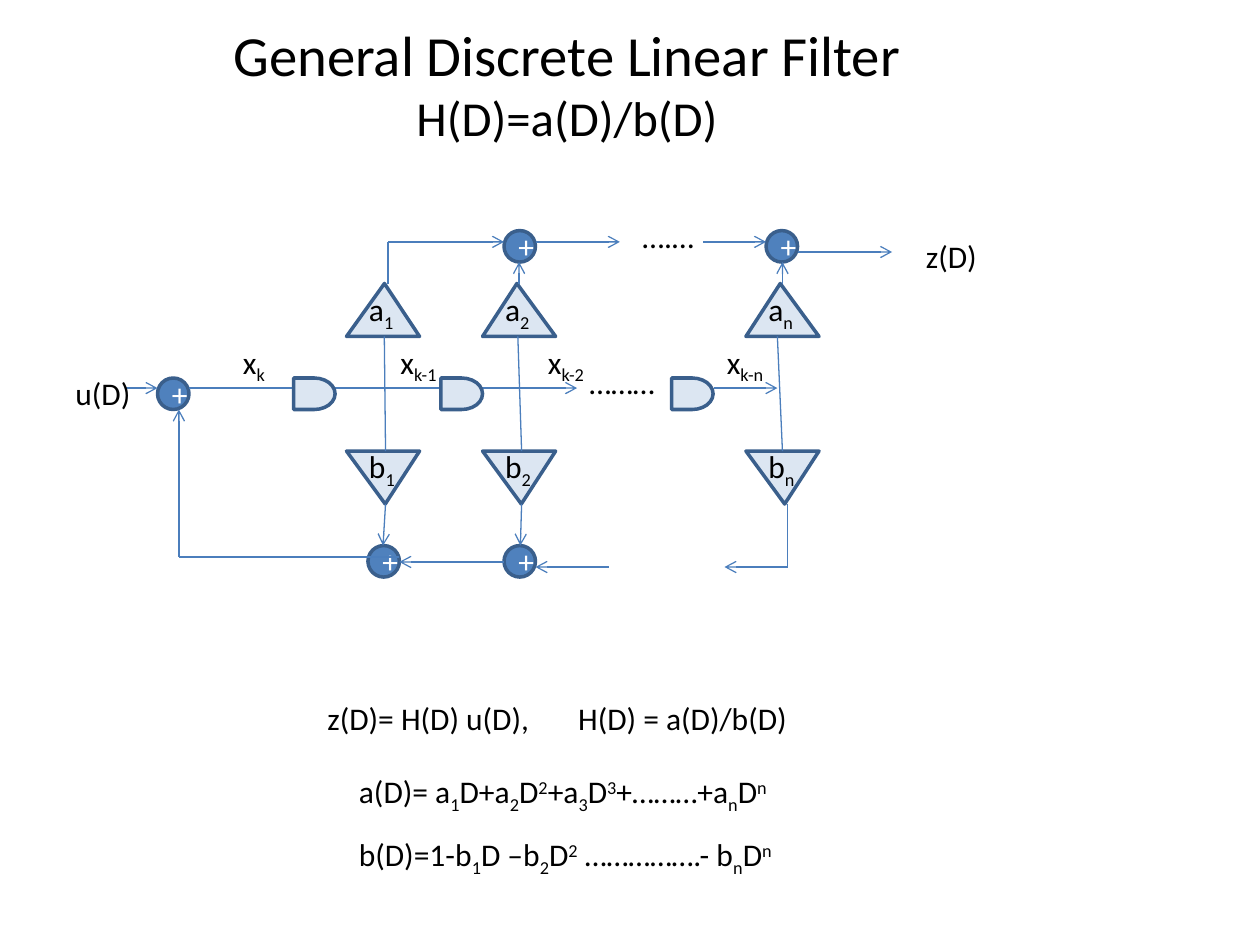
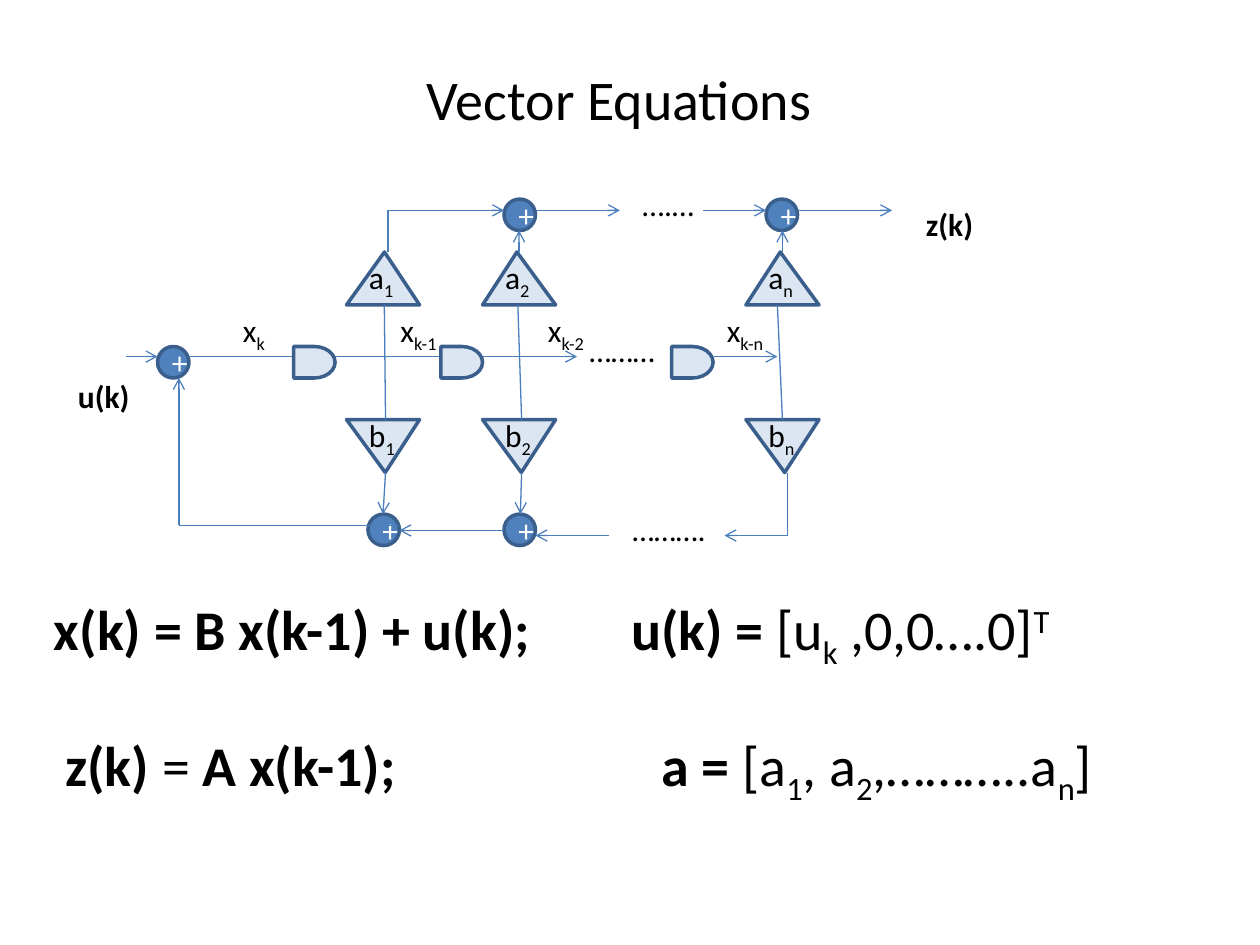
import pptx
import pptx.dml.color
import pptx.enum.shapes
import pptx.enum.text
import pptx.oxml
import pptx.oxml.ns
import pptx.util
from pptx.util import Inches

SHAPES = pptx.enum.shapes.MSO_SHAPE
ALIGN = pptx.enum.text.PP_ALIGN
ANCHOR = pptx.enum.text.MSO_ANCHOR
AUTO_SIZE = pptx.enum.text.MSO_AUTO_SIZE


def color(hex_string):
    return pptx.dml.color.RGBColor.from_string(hex_string)


class Deck:
    FONT = "Calibri"
    TEXT, WHITE = "000000", "FFFFFF"
    ADDER, BLOCK = "4F81BD", "DCE6F2"
    OUTLINE, WIRE = "3A5F8C", "4B7EBC"
    BASELINES = {"_": "-25000", "^": "30000"}

    def __init__(self):
        self.presentation = pptx.Presentation()
        self.presentation.slide_width = Inches(10)
        self.presentation.slide_height = Inches(7.5)
        self.slide = None
        self.shift = 0

    def new_slide(self):
        self.slide = self.presentation.slides.add_slide(self.presentation.slide_layouts[6])
        self.shift = 0

    def add_runs(self, paragraph, markup, size, hex_string=TEXT):
        """Pieces are split by |; a leading _, ^ or * means sub, super or bold."""
        for piece in markup.split("|"):
            mark = piece[0] if piece[0] in "_^*" else ""
            run = paragraph.add_run()
            run.text = piece[len(mark):]
            run.font.name = self.FONT
            run.font.size = pptx.util.Pt(size)
            run.font.bold = mark == "*"
            run.font.color.rgb = color(hex_string)
            if mark in self.BASELINES:
                run.font._element.set("baseline", self.BASELINES[mark])

    def title(self, left, top, width, height, lines):
        box = self.slide.shapes.add_textbox(Inches(left), Inches(top), Inches(width), Inches(height))
        frame = box.text_frame
        frame.word_wrap = True
        frame.vertical_anchor = ANCHOR.MIDDLE
        for index, (markup, size) in enumerate(lines):
            paragraph = frame.add_paragraph() if index else frame.paragraphs[0]
            paragraph.alignment = ALIGN.CENTER
            self.add_runs(paragraph, markup, size)

    def text(self, left, top, width, markup, size=18, height=0.4, wrap=False, tab=None):
        box = self.slide.shapes.add_textbox(
            Inches(left), Inches(top + self.shift), Inches(width), Inches(height))
        frame = box.text_frame
        frame.word_wrap = wrap
        frame.auto_size = AUTO_SIZE.SHAPE_TO_FIT_TEXT
        paragraph = frame.paragraphs[0]
        self.add_runs(paragraph, markup, size)
        if tab:
            properties = paragraph._p.get_or_add_pPr()
            tabs = pptx.oxml.parse_xml(
                f'<a:tabLst {pptx.oxml.ns.nsdecls("a")}><a:tab pos="{Inches(tab)}" algn="l"/></a:tabLst>')
            properties.append(tabs)

    def shape(self, kind, left, top, width, height, fill):
        shape = self.slide.shapes.add_shape(
            kind, Inches(left), Inches(top + self.shift), Inches(width), Inches(height))
        shape.shadow.inherit = False
        shape.fill.solid()
        shape.fill.fore_color.rgb = color(fill)
        shape.line.color.rgb = color(self.OUTLINE)
        shape.line.width = pptx.util.Pt(2)
        return shape

    def adder(self, left, top):
        shape = self.shape(SHAPES.OVAL, left, top, 0.25, 0.25, self.ADDER)
        shape.text_frame.vertical_anchor = ANCHOR.MIDDLE
        paragraph = shape.text_frame.paragraphs[0]
        paragraph.alignment = ALIGN.CENTER
        self.add_runs(paragraph, "+", 18, self.WHITE)

    def delay(self, left):
        self.shape(SHAPES.FLOWCHART_DELAY, left, 3, 0.33, 0.25, self.BLOCK)

    def gain(self, left, top, apex=0.47, rotation=0):
        shape = self.shape(SHAPES.ISOSCELES_TRIANGLE, left, top, 0.58, 0.42, self.BLOCK)
        shape.adjustments[0] = apex
        shape.rotation = rotation

    def wire(self, x1, y1, x2, y2, arrow=True):
        wire = self.slide.shapes.add_connector(
            pptx.enum.shapes.MSO_CONNECTOR.STRAIGHT,
            Inches(x1), Inches(y1 + self.shift), Inches(x2), Inches(y2 + self.shift))
        wire.line.color.rgb = color(self.WIRE)
        wire.line.width = pptx.util.Pt(0.75)
        properties = wire._element.spPr
        namespace = pptx.oxml.ns.nsdecls("a")
        if arrow:
            properties.find(pptx.oxml.ns.qn("a:ln")).append(
                pptx.oxml.parse_xml(f'<a:tailEnd {namespace} type="arrow"/>'))
        properties.append(pptx.oxml.parse_xml(f"<a:effectLst {namespace}/>"))


def draw_filter(deck, shift, output_y):
    """Tapped delay line with feed-forward gains a and feedback gains b."""
    deck.shift = shift

    # Adders
    for left, top in [(2.92, 4.33), (6.08, 1.83), (4, 1.83), (1.25, 3), (4, 4.33)]:
        deck.adder(left, top)

    # Delay line
    deck.wire(1, 3.08, 1.25, 3.08)
    deck.wire(1.5, 3.08, 4.58, 3.08)
    deck.wire(5.67, 3.08, 6.17, 3.08)
    for left in (2.33, 3.5, 5.33):
        deck.delay(left)

    # Taps: gain a above, gain b below, joined by a wire
    taps = [("1", 2.75, 0.52, 3.05, 3.06),
            ("2", 3.83, 0.47, 4.11, 4.14),
            ("n", 5.92, 0.47, 6.17, 6.21)]
    for index, left, apex, upper_x, lower_x in taps:
        deck.gain(left, 2.25, apex)
        deck.gain(left, 3.58, rotation=180)
        deck.wire(upper_x, 2.67, lower_x, 3.58, arrow=False)
        deck.text(left + 0.08, 2.25, 0.41, f"a|_{index}")
        deck.text(left + 0.08, 3.5, 0.42, f"b|_{index}")

    # Feed-forward path
    for x in (4.12, 6.21):
        deck.wire(x, 2.25, x, 2.08)
    deck.wire(3.08, 2.25, 3.08, 1.92, arrow=False)
    for start, end in [(3.08, 4), (4.25, 4.92), (5.58, 6.08)]:
        deck.wire(start, 1.92, end, 1.92)
    deck.wire(6.33, output_y, 7.08, output_y)

    # Feedback path
    deck.wire(3.06, 4, 3.04, 4.33)
    deck.wire(4.14, 4, 4.13, 4.33)
    deck.wire(6.25, 4, 6.25, 4.5, arrow=False)
    deck.wire(6.25, 4.5, 5.75, 4.5)
    deck.wire(4.83, 4.5, 4.25, 4.5)
    deck.wire(4, 4.46, 3.17, 4.46)
    deck.wire(3.17, 4.42, 1.42, 4.42, arrow=False)
    deck.wire(1.42, 4.42, 1.42, 3.25)

    # State labels and dots
    for left, width, index in [(1.83, 0.39, "k"), (3.08, 0.52, "k-1"),
                               (4.25, 0.52, "k-2"), (5.67, 0.53, "k-n")]:
        deck.text(left, 2.67, width, f"x|_{index}")
    deck.text(4.58, 2.83, 0.72, "………")
    deck.text(5, 1.67, 0.61, "….…")
    deck.shift = 0


def transfer_function_slide(deck):
    deck.new_slide()
    deck.title(0, 0.1, 9, 1.12,
               [("General Discrete Linear Filter", 32.4), ("H(D)=a(D)/b(D)", 27.9)])
    draw_filter(deck, shift=0, output_y=2)
    deck.text(7.25, 1.83, 0.61, "z(D)")
    deck.text(0.5, 2.92, 0.65, "u(D)")

    # Equations
    deck.text(2.5, 5.5, 3.92, "z(D)= H(D) u(D),\tH(D) = a(D)/b(D)", wrap=True, tab=1.99)
    deck.text(2.75, 6.08, 3.61, "a(D)= a|_1|D+a|_2|D|^2|+a|_3|D|^3|+………+a|_n|D|^n")
    deck.text(2.75, 6.58, 3.67, "b(D)=1-b|_1|D –b|_2|D|^2| …………….- b|_n|D|^n", wrap=True)


def vector_equations_slide(deck):
    deck.new_slide()
    deck.title(0.5, 0.3, 8.83, 0.95, [("Vector Equations", 32)])
    draw_filter(deck, shift=-0.25, output_y=1.92)
    deck.text(7.25, 1.58, 0.61, "*z(k)")
    deck.text(0.52, 2.94, 0.62, "*u(k)")
    deck.text(4.92, 4, 0.79, "……….")

    # Equations
    deck.text(0.33, 4.67, 8.25, "*x(k) = B x(k-1) + u(k);\tu(k) = |[u|_k| ,0,0….0]|^T",
              size=32, height=0.64, wrap=True, tab=4.58)
    deck.text(0.42, 5.75, 8.64, "*z(k) |= |*A x(k-1);\ta = |[a|_1|, a|_2|,………..a|_n|]",
              size=32, height=0.64, wrap=True, tab=4.73)


def main():
    deck = Deck()
    transfer_function_slide(deck)
    vector_equations_slide(deck)
    deck.presentation.save("out.pptx")


if __name__ == "__main__":
    main()
